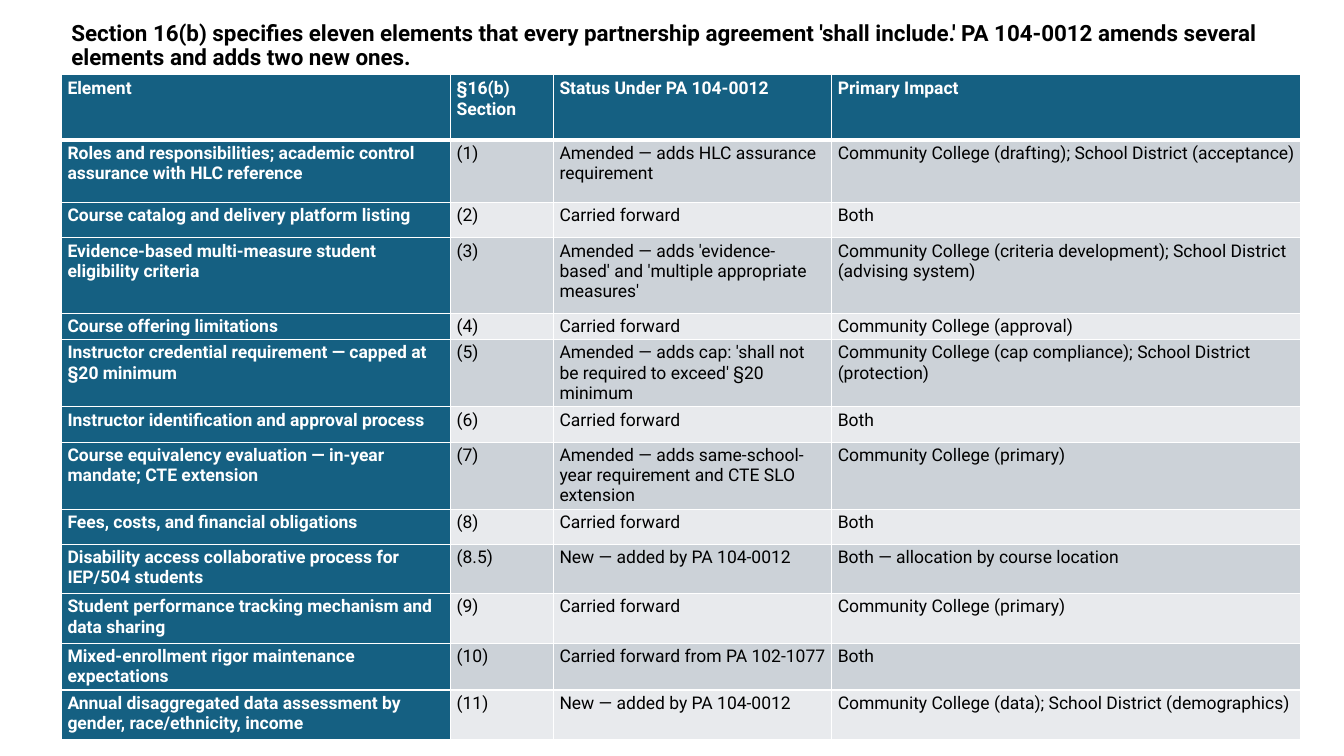
import lxml.etree
import pptx
import pptx.dml.color
import pptx.enum.text
import pptx.oxml.ns
import pptx.util

THEME = {
    "font": "Roboto",
    "title_size": 16,
    "cell_size": 12.5,
    "accent": "156082",
    "dark_band": "CCD2D8",
    "light_band": "E8EAED",
    "text": "000000",
    "inverse": "FFFFFF",
    "border": "FFFFFF",
}
TITLE = (
    "Section 16(b) specifies eleven elements that every partnership agreement "
    "'shall include.' PA 104-0012 amends several elements and adds two new ones."
)
ROWS = [
    (0.65, "Element", "§16(b) Section", "Status Under PA 104-0012", "Primary Impact"),
    (0.62, "Roles and responsibilities; academic control assurance with HLC reference",
     "(1)", "Amended — adds HLC assurance requirement",
     "Community College (drafting); School District (acceptance)"),
    (0.35, "Course catalog and delivery platform listing", "(2)", "Carried forward", "Both"),
    (0.75, "Evidence-based multi-measure student eligibility criteria", "(3)",
     "Amended — adds 'evidence-based' and 'multiple appropriate measures'",
     "Community College (criteria development); School District (advising system)"),
    (0.22, "Course offering limitations", "(4)", "Carried forward",
     "Community College (approval)"),
    (0.62, "Instructor credential requirement — capped at §20 minimum", "(5)",
     "Amended — adds cap: 'shall not be required to exceed' §20 minimum",
     "Community College (cap compliance); School District (protection)"),
    (0.35, "Instructor identification and approval process", "(6)", "Carried forward", "Both"),
    (0.62, "Course equivalency evaluation — in-year mandate; CTE extension", "(7)",
     "Amended — adds same-school-year requirement and CTE SLO extension",
     "Community College (primary)"),
    (0.35, "Fees, costs, and financial obligations", "(8)", "Carried forward", "Both"),
    (0.49, "Disability access collaborative process for IEP/504 students", "(8.5)",
     "New — added by PA 104-0012", "Both — allocation by course location"),
    (0.49, "Student performance tracking mechanism and data sharing", "(9)",
     "Carried forward", "Community College (primary)"),
    (0.35, "Mixed-enrollment rigor maintenance expectations", "(10)",
     "Carried forward from PA 102-1077", "Both"),
    (0.49, "Annual disaggregated data assessment by gender, race/ethnicity, income", "(11)",
     "New — added by PA 104-0012",
     "Community College (data); School District (demographics)"),
]
COLUMN_WIDTHS = [3.86, 1.02, 2.76, 4.65]
inch = pptx.util.Inches


def add_span(para, text, size, color, bold):
    span = para.add_run()
    span.text = text
    span.font.name = THEME["font"]
    span.font.size = pptx.util.Pt(size)
    span.font.bold = bold
    span.font.color.rgb = pptx.dml.color.RGBColor.from_string(color)


def add_border(cell, side, points):
    line = lxml.etree.SubElement(
        cell._tc.get_or_add_tcPr(), pptx.oxml.ns.qn(f"a:ln{side}"),
        w=str(pptx.util.Pt(points)))
    fill = lxml.etree.SubElement(line, pptx.oxml.ns.qn("a:solidFill"))
    lxml.etree.SubElement(fill, pptx.oxml.ns.qn("a:srgbClr"), val=THEME["border"])


deck = pptx.Presentation()
deck.slide_width = inch(13.33)
deck.slide_height = inch(7.5)
page = deck.slides.add_slide(deck.slide_layouts[6])

left, title_top, table_top = inch(0.61), inch(0.18), inch(0.74)
content_width = inch(sum(COLUMN_WIDTHS))

table = page.shapes.add_table(
    len(ROWS), len(COLUMN_WIDTHS), left, table_top, content_width,
    inch(sum(row[0] for row in ROWS))).table
table.first_col = True
for column, width in zip(table.columns, COLUMN_WIDTHS):
    column.width = inch(width)

for row_index, (height, *texts) in enumerate(ROWS):
    table.rows[row_index].height = inch(height)
    is_header = row_index == 0
    band = THEME["dark_band"] if row_index % 2 else THEME["light_band"]
    for column_index, text in enumerate(texts):
        cell = table.cell(row_index, column_index)
        strong = is_header or column_index == 0
        cell.margin_left = cell.margin_right = inch(0.06)
        cell.margin_top = cell.margin_bottom = inch(0.04 if is_header else 0.03)
        for side in "LRTB":
            under_header = (row_index, side) in [(0, "B"), (1, "T")]
            add_border(cell, side, 3 if under_header else 1)
        cell.fill.solid()
        cell.fill.fore_color.rgb = pptx.dml.color.RGBColor.from_string(
            THEME["accent"] if strong else band)
        para = cell.text_frame.paragraphs[0]
        if not is_header:
            para.space_after = pptx.util.Pt(2)
        add_span(para, text, THEME["cell_size"],
                 THEME["inverse"] if strong else THEME["text"], strong)

title_box = page.shapes.add_textbox(left, title_top, content_width, inch(0.55))
title_box.text_frame.word_wrap = True
title_box.text_frame.vertical_anchor = pptx.enum.text.MSO_ANCHOR.MIDDLE
title_para = title_box.text_frame.paragraphs[0]
title_para.line_spacing = 0.9
add_span(title_para, TITLE, THEME["title_size"], THEME["text"], True)

deck.save("out.pptx")
